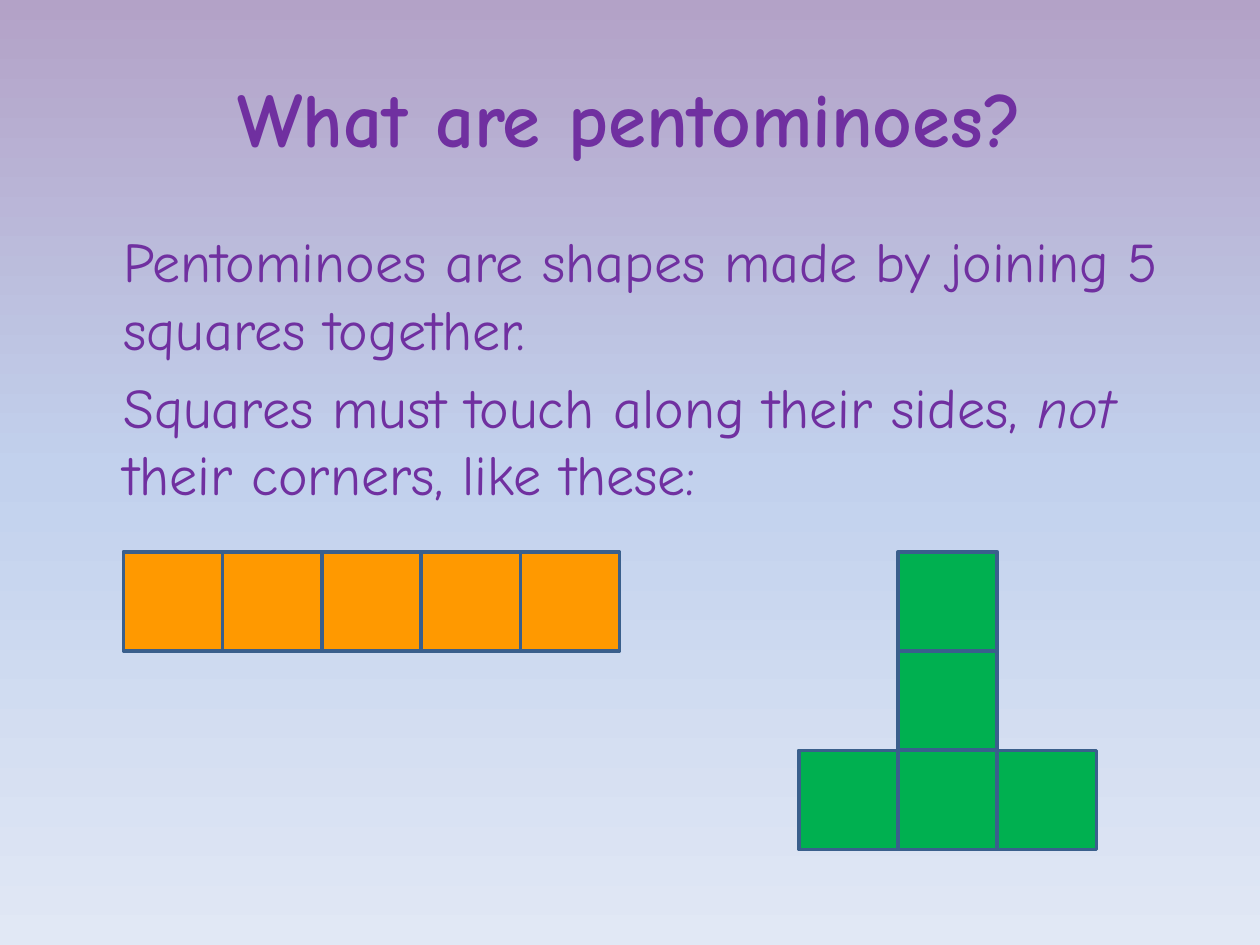
"""Build the slide that explains pentominoes with two examples."""
import copy
import dataclasses

import pptx
import pptx.dml.color
import pptx.enum.shapes
import pptx.enum.text
import pptx.oxml.ns
import pptx.slide
import pptx.text.text
import pptx.util
from pptx.util import Inches

PURPLE = pptx.dml.color.RGBColor(0x70, 0x30, 0xA0)
ORANGE = pptx.dml.color.RGBColor(0xFF, 0x99, 0x00)
GREEN = pptx.dml.color.RGBColor(0x00, 0xB0, 0x50)
OUTLINE = pptx.dml.color.RGBColor(0x3A, 0x5F, 0x8C)
SKY = [
    pptx.dml.color.RGBColor(0xB3, 0xA2, 0xC7),
    pptx.dml.color.RGBColor(0xC2, 0xD1, 0xED),
    pptx.dml.color.RGBColor(0xE1, 0xE8, 0xF5),
]

SQUARE = 0.7875
TOP = 4.38
TITLE_FORMAT = {"name": "Comic Neue", "size": pptx.util.Pt(44), "bold": True}
BODY_FORMAT = {"name": "Comic Neue", "size": pptx.util.Pt(32)}
TITLE_BOX = {"left": Inches(0.5), "top": Inches(0.3),
             "width": Inches(9), "height": Inches(1.25)}
BODY_BOX = {"left": Inches(0.5), "top": Inches(1.75),
            "width": Inches(9), "height": Inches(4.95)}
EXPLANATION = [
    [("Pentominoes are shapes made by joining 5 squares together.", {})],
    [("Squares must touch along their sides, ", {}),
     ("not ", {"italic": True}),
     ("their corners, like these:", {})],
]


@dataclasses.dataclass(frozen=True)
class Pentomino:
    left: float
    color: pptx.dml.color.RGBColor
    cells: tuple[tuple[int, int], ...]


PENTOMINOES = [
    Pentomino(0.98, ORANGE, tuple((column, 0) for column in range(5))),
    Pentomino(6.34, GREEN, ((1, 0), (1, 1), (0, 2), (1, 2), (2, 2))),
]


def set_attributes(target: object, values: dict) -> None:
    """Set each named attribute of the target."""
    for name, value in values.items():
        setattr(target, name, value)


def paint_background(slide: pptx.slide.Slide) -> None:
    """Fill the slide with a gradient from top to bottom."""
    fill = slide.background.fill
    fill.gradient()
    fill.gradient_angle = 270
    stop_list = slide._element.find(".//" + pptx.oxml.ns.qn("a:gsLst"))
    stop_list.insert(1, copy.deepcopy(stop_list[0]))
    for index, (stop, color) in enumerate(zip(fill.gradient_stops, SKY)):
        stop.position = index / (len(SKY) - 1)
        stop.color.rgb = color


def add_phrase(paragraph: pptx.text.text._Paragraph, words: str, values: dict) -> None:
    """Append one purple run."""
    phrase = paragraph.add_run()
    phrase.text = words
    set_attributes(phrase.font, values)
    phrase.font.color.rgb = PURPLE


def write_explanation(frame: pptx.text.text.TextFrame) -> None:
    """Write the indented paragraphs without bullets."""
    frame.auto_size = pptx.enum.text.MSO_AUTO_SIZE.NONE
    for index, phrases in enumerate(EXPLANATION):
        paragraph = frame.add_paragraph() if index else frame.paragraphs[0]
        properties = paragraph._p.get_or_add_pPr()
        properties.set("marL", str(Inches(0.38)))
        properties.set("indent", "0")
        properties.append(pptx.oxml.parse_xml(
            f"<a:buNone {pptx.oxml.ns.nsdecls('a')}/>"))
        for words, emphasis in phrases:
            add_phrase(paragraph, words, BODY_FORMAT | emphasis)


def draw_pentomino(slide: pptx.slide.Slide, pentomino: Pentomino) -> None:
    """Draw the squares of one pentomino on its grid."""
    for column, row in pentomino.cells:
        square = slide.shapes.add_shape(
            pptx.enum.shapes.MSO_SHAPE.RECTANGLE,
            Inches(pentomino.left + column * SQUARE),
            Inches(TOP + row * SQUARE),
            Inches(SQUARE), Inches(SQUARE))
        square.shadow.inherit = False
        square.fill.solid()
        square.fill.fore_color.rgb = pentomino.color
        square.line.color.rgb = OUTLINE
        square.line.width = pptx.util.Pt(2)


def main() -> None:
    """Build and save the presentation."""
    presentation = pptx.Presentation()
    set_attributes(presentation, {"slide_width": Inches(10),
                                  "slide_height": Inches(7.5)})
    slide = presentation.slides.add_slide(presentation.slide_layouts[1])
    paint_background(slide)

    title = slide.shapes.title
    set_attributes(title, TITLE_BOX)
    add_phrase(title.text_frame.paragraphs[0], "What are pentominoes?", TITLE_FORMAT)

    explanation = slide.placeholders[1]
    set_attributes(explanation, BODY_BOX)
    write_explanation(explanation.text_frame)

    for pentomino in PENTOMINOES:
        draw_pentomino(slide, pentomino)
    presentation.save("out.pptx")


if __name__ == "__main__":
    main()
